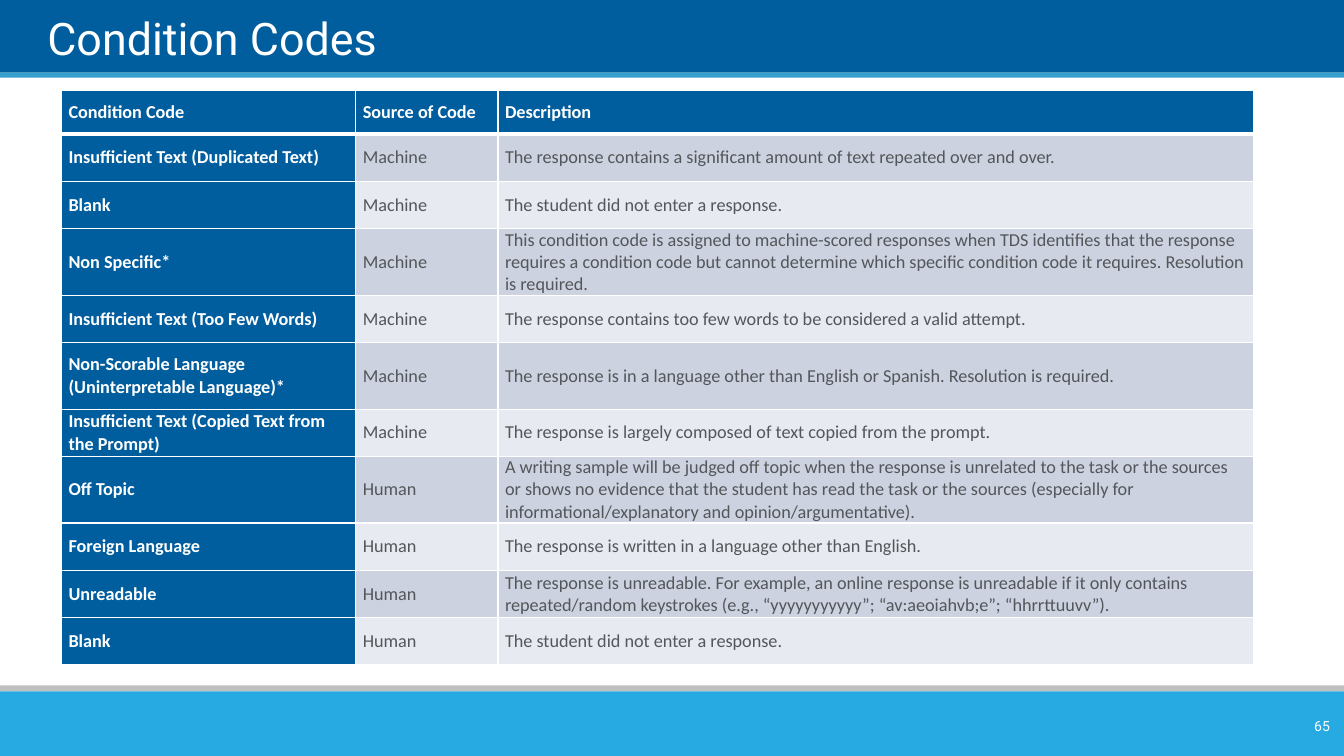
from lxml import etree
from pptx import Presentation
from pptx.dml.color import RGBColor
from pptx.enum.shapes import MSO_SHAPE
from pptx.enum.text import MSO_ANCHOR, PP_ALIGN
from pptx.oxml.ns import qn
from pptx.util import Inches, Pt

RECTANGLE = MSO_SHAPE.RECTANGLE
MIDDLE, BOTTOM = MSO_ANCHOR.MIDDLE, MSO_ANCHOR.BOTTOM
LEFT, RIGHT = PP_ALIGN.LEFT, PP_ALIGN.RIGHT

WIDTH, HEIGHT = 13.33, 7.5
COLORS = {
    "navy": "005E9E",
    "accent": "35A0CE",
    "gray": "BFBFBF",
    "sky": "27AAE1",
    "white": "FFFFFF",
    "text": "53565A",
    "odd_row": "CCD2DF",
    "even_row": "E7EAF0",
}
COLUMN_WIDTHS = (2.92, 1.41, 7.49)
HEADER_HEIGHT, ROW_HEIGHT, TALL_ROW_HEIGHT = 0.43, 0.47, 0.66
TALL_ROWS = (3, 5, 7)
HEADER = ("Condition Code", "Source of Code", "Description")
CODES = (
    ("Insufficient Text (Duplicated Text)", "Machine",
     "The response contains a significant amount of text repeated over and over."),
    ("Blank", "Machine", "The student did not enter a response."),
    ("Non Specific*", "Machine",
     "This condition code is assigned to machine-scored responses when TDS identifies "
     "that the response requires a condition code but cannot determine which specific "
     "condition code it requires. Resolution is required."),
    ("Insufficient Text (Too Few Words)", "Machine",
     "The response contains too few words to be considered a valid attempt."),
    ("Non-Scorable Language (Uninterpretable Language)*", "Machine",
     "The response is in a language other than English or Spanish. "
     "Resolution is required."),
    ("Insufficient Text (Copied Text from the Prompt)", "Machine",
     "The response is largely composed of text copied from the prompt."),
    ("Off Topic", "Human",
     "A writing sample will be judged off topic when the response is unrelated to the "
     "task or the sources or shows no evidence that the student has read the task or "
     "the sources (especially for informational/explanatory and opinion/argumentative)."),
    ("Foreign Language", "Human",
     "The response is written in a language other than English."),
    ("Unreadable", "Human",
     "The response is unreadable. For example, an online response is unreadable if it "
     "only contains repeated/random keystrokes (e.g., “yyyyyyyyyyy”; “av:aeoiahvb;e”; "
     "“hhrrttuuvv”)."),
    ("Blank", "Human", "The student did not enter a response."),
)


def color(name):
    """Return the named colour."""
    return RGBColor.from_string(COLORS[name])


def add_run(paragraph, text, font_name, size, color_name, bold=False):
    """Add one formatted run to a paragraph."""
    run = paragraph.add_run()
    run.text = text
    run.font.name = font_name
    run.font.size = Pt(size)
    run.font.bold = bold
    run.font.color.rgb = color(color_name)


def add_band(slide, left, top, width, height, color_name):
    """Add a plain filled rectangle."""
    shape = slide.shapes.add_shape(
        RECTANGLE, Inches(left), Inches(top), Inches(width), Inches(height))
    shape.shadow.inherit = False
    shape.fill.solid()
    shape.fill.fore_color.rgb = color(color_name)
    shape.line.fill.background()


def add_label(slide, box, text, size, anchor, alignment):
    """Add a single white line of text without insets."""
    shape = slide.shapes.add_textbox(*(Inches(length) for length in box))
    frame = shape.text_frame
    frame.word_wrap = True
    frame.vertical_anchor = anchor
    frame.margin_left = frame.margin_right = 0
    frame.margin_top = frame.margin_bottom = 0
    frame.paragraphs[0].alignment = alignment
    add_run(frame.paragraphs[0], text, "Roboto", size, "white")


def add_title_bar(slide, left, top, width, height):
    """Draw the top bar, its accent stripe and the title."""
    stripe = 0.05
    add_band(slide, left, top, width, height - stripe, "navy")
    add_band(slide, left, top + height - stripe, width, stripe, "accent")
    add_label(slide, (left + 0.47, top + 0.07, width - 0.9, 0.57),
              "Condition Codes", 32, BOTTOM, LEFT)


def add_footer(slide, left, top, width, height):
    """Draw the bottom bar, its gray stripe and the slide number."""
    stripe = 0.06
    add_band(slide, left, top, width, stripe, "gray")
    add_band(slide, left, top + stripe, width, height - stripe, "sky")
    add_label(slide, (left + width - 0.82, top + 0.25, 0.68, 0.3),
              "65", 10, MIDDLE, RIGHT)


def set_borders(cell, bottom_width):
    """Give a cell white borders with the given bottom width."""
    properties = cell._tc.get_or_add_tcPr()
    for side, points in (("L", 1), ("R", 1), ("T", 1), ("B", bottom_width)):
        line = etree.SubElement(properties, qn(f"a:ln{side}"), w=str(Pt(points)))
        fill = etree.SubElement(line, qn("a:solidFill"))
        etree.SubElement(fill, qn("a:srgbClr"), val=COLORS["white"])


def fill_cell(cell, text, fill_name, strong, bottom_width):
    """Format one table cell and write its text."""
    set_borders(cell, bottom_width)
    cell.fill.solid()
    cell.fill.fore_color.rgb = color(fill_name)
    cell.vertical_anchor = MIDDLE
    cell.margin_left = cell.margin_right = Inches(0.07)
    cell.margin_top = cell.margin_bottom = 0
    add_run(cell.text_frame.paragraphs[0], text, "Calibri", 13,
            "white" if strong else "text", strong)


def add_code_table(slide, left, top, width, height):
    """Build the table of condition codes in the given box."""
    rows = (HEADER, *CODES)
    table = slide.shapes.add_table(
        len(rows), len(HEADER), Inches(left), Inches(top),
        Inches(width), Inches(height)).table
    for column, column_width in zip(table.columns, COLUMN_WIDTHS):
        column.width = Inches(column_width)
    for row_index, row in enumerate(rows):
        is_header = row_index == 0
        row_height = TALL_ROW_HEIGHT if row_index in TALL_ROWS else ROW_HEIGHT
        table.rows[row_index].height = Inches(HEADER_HEIGHT if is_header else row_height)
        band = "odd_row" if row_index % 2 else "even_row"
        for column_index, text in enumerate(row):
            strong = is_header or column_index == 0
            fill_cell(table.cell(row_index, column_index), text,
                      "navy" if strong else band, strong, 3 if is_header else 1)


def main():
    """Build and save the slide."""
    presentation = Presentation()
    presentation.slide_width = Inches(WIDTH)
    presentation.slide_height = Inches(HEIGHT)
    slide = presentation.slides.add_slide(presentation.slide_layouts[6])
    add_title_bar(slide, 0, 0, WIDTH, 0.77)
    add_footer(slide, 0, 6.8, WIDTH, HEIGHT - 6.8)
    add_code_table(slide, 0.61, 0.9, sum(COLUMN_WIDTHS), 5.7)
    presentation.save("out.pptx")


if __name__ == "__main__":
    main()
